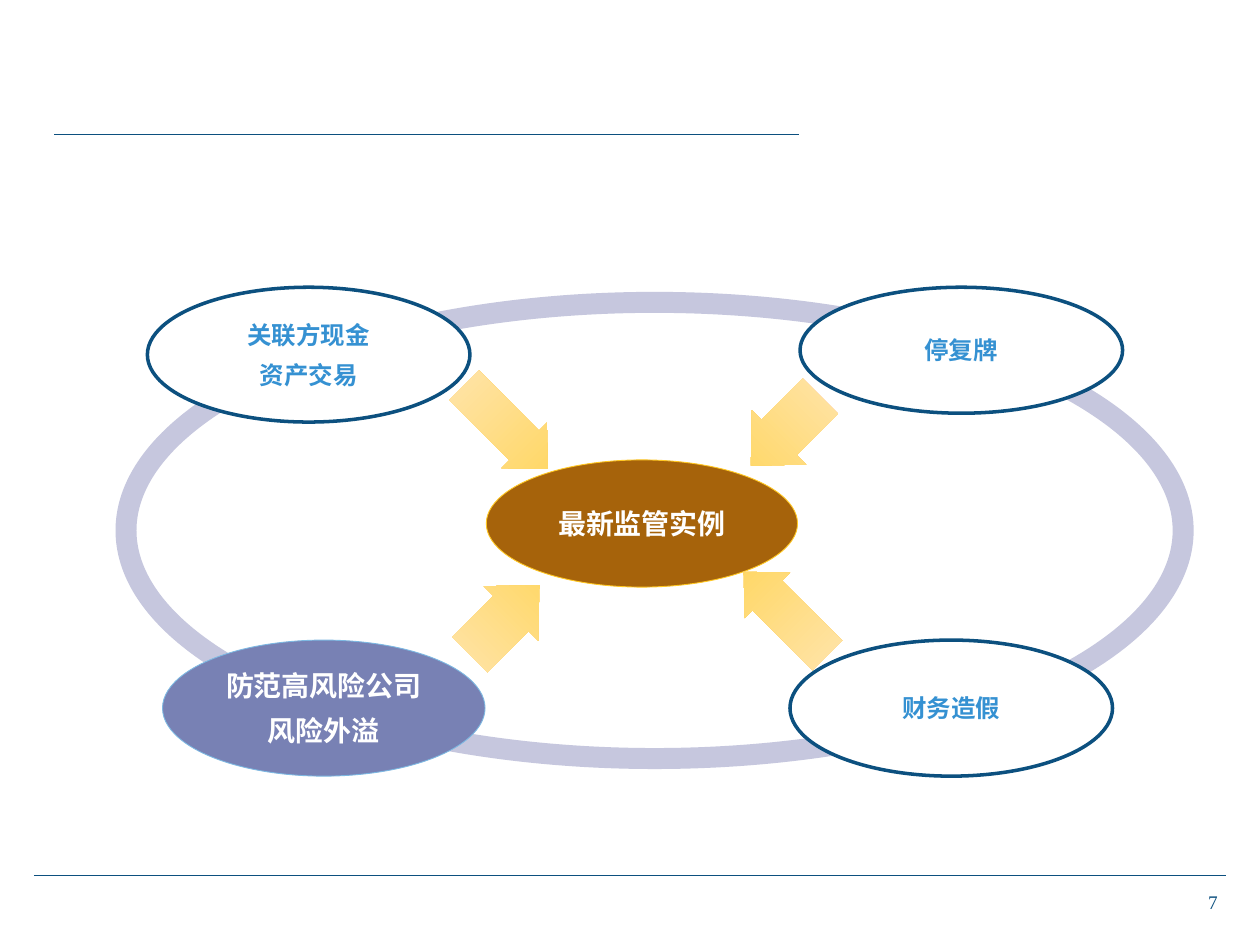
from dataclasses import dataclass
from typing import Optional

from pptx import Presentation
from pptx.dml.color import RGBColor
from pptx.enum.shapes import MSO_CONNECTOR, MSO_SHAPE
from pptx.enum.text import MSO_ANCHOR, MSO_AUTO_SIZE, PP_ALIGN
from pptx.oxml.ns import qn
from pptx.util import Inches, Pt

SLIDE_WIDTH, SLIDE_HEIGHT = Inches(10), Inches(7.5)
COLUMN, ROW = SLIDE_WIDTH / 100, SLIDE_HEIGHT / 75
COLORS = {
    "navy": "0C507F",
    "sky": "7DB8E2",
    "blue": "3591D2",
    "lavender": "C6C7DE",
    "violet": "7881B4",
    "brown": "A6630B",
    "gold": "FFC722",
    "arrow_tip": "FFD55A",
    "arrow_tail": "FFE5AF",
    "white": "FFFFFF",
}


@dataclass(frozen=True)
class Area:
    column: float
    row: float
    columns: float
    rows: float

    def box(self) -> tuple[int, int, int, int]:
        return (round(self.column * COLUMN), round(self.row * ROW),
                round(self.columns * COLUMN), round(self.rows * ROW))


@dataclass(frozen=True)
class Oval:
    area: Area
    text: str = ""
    fill: Optional[str] = "white"
    line: str = "navy"
    line_width: float = 2
    font_color: str = "blue"
    font_size: float = 14


@dataclass(frozen=True)
class Arrow:
    area: Area
    rotation: float


RING = Oval(Area(10, 24, 83.9, 36.2), fill=None, line="lavender", line_width=12)
CORE = Oval(Area(38.6, 36.5, 24.7, 10.1), "最新监管实例", "brown", "gold", 0.5, "white", 16)
ARROWS = [
    Arrow(Area(59.3, 30.3, 6.1, 7.8), 225),
    Arrow(Area(37.6, 29.2, 5.1, 9.4), 135),
    Arrow(Area(59.8, 44, 5.1, 9.4), 315),
    Arrow(Area(37, 45.3, 6.1, 7.8), 45),
]
TOPICS = [
    Oval(Area(11.7, 22.8, 25.6, 10.7), "关联方现金\n资产交易"),
    Oval(Area(63.5, 22.8, 25.6, 10), "停复牌"),
    Oval(Area(12.9, 50.8, 25.6, 10.8), "防范高风险公司\n风险外溢", "violet", "sky", 0.5, "white", 16),
    Oval(Area(62.7, 50.8, 25.6, 10.8), "财务造假"),
]
RULES = [Area(2.7, 69.5, 94.6, 0), Area(4.3, 10.7, 59.1, 0)]


def rgb(name: str) -> RGBColor:
    return RGBColor.from_string(COLORS[name])


def draw_rule(slide, area: Area) -> None:
    left, top, width, height = area.box()
    rule = slide.shapes.add_connector(
        MSO_CONNECTOR.STRAIGHT, left, top, left + width, top + height)
    rule.line.color.rgb = rgb("navy")
    rule.line.width = Pt(0.5)
    properties = rule._element.spPr
    properties.append(properties.makeelement(qn("a:effectLst"), {}))


def draw_oval(slide, oval: Oval) -> None:
    ellipse = slide.shapes.add_shape(MSO_SHAPE.OVAL, *oval.area.box())
    ellipse.shadow.inherit = False
    ellipse.line.color.rgb = rgb(oval.line)
    ellipse.line.width = Pt(oval.line_width)
    if oval.fill is None:
        ellipse.fill.background()
    else:
        ellipse.fill.solid()
        ellipse.fill.fore_color.rgb = rgb(oval.fill)
    if not oval.text:
        return
    frame = ellipse.text_frame
    frame.margin_left = frame.margin_top = frame.margin_right = frame.margin_bottom = 0
    frame.vertical_anchor = MSO_ANCHOR.MIDDLE
    frame.text = oval.text
    for position, paragraph in enumerate(frame.paragraphs):
        paragraph.alignment = PP_ALIGN.CENTER
        if position:
            paragraph.space_before = Pt(0.4 * oval.font_size)
        for run in paragraph.runs:
            run.font.name = "Arial"
            run.font.size = Pt(oval.font_size)
            run.font.bold = True
            run.font.color.rgb = rgb(oval.font_color)


def draw_arrow(slide, arrow: Arrow) -> None:
    pointer = slide.shapes.add_shape(MSO_SHAPE.UP_ARROW, *arrow.area.box())
    pointer.shadow.inherit = False
    pointer.rotation = arrow.rotation
    pointer.adjustments[0] = 0.65
    pointer.adjustments[1] = 0.52
    pointer.line.fill.background()
    pointer.fill.gradient()
    pointer.fill.gradient_angle = 270
    for stop, position, color in zip(
            pointer.fill.gradient_stops, (0, 1), ("arrow_tip", "arrow_tail")):
        stop.position = position
        stop.color.rgb = rgb(color)


def draw_page_number(slide, area: Area, number: str) -> None:
    frame = slide.shapes.add_textbox(*area.box()).text_frame
    frame.word_wrap = True
    frame.auto_size = MSO_AUTO_SIZE.SHAPE_TO_FIT_TEXT
    frame.text = number
    font = frame.paragraphs[0].runs[0].font
    font.name = "Times New Roman"
    font.size = Pt(11)
    font.color.rgb = rgb("navy")


def main() -> None:
    deck = Presentation()
    deck.slide_width, deck.slide_height = SLIDE_WIDTH, SLIDE_HEIGHT
    slide = deck.slides.add_slide(deck.slide_layouts[6])
    for rule in RULES:
        draw_rule(slide, rule)
    draw_oval(slide, RING)
    draw_oval(slide, CORE)
    for arrow in ARROWS:
        draw_arrow(slide, arrow)
    for topic in TOPICS:
        draw_oval(slide, topic)
    draw_page_number(slide, Area(94.9, 70.2, 3.2, 2.9), "7")
    deck.save("out.pptx")


if __name__ == "__main__":
    main()
